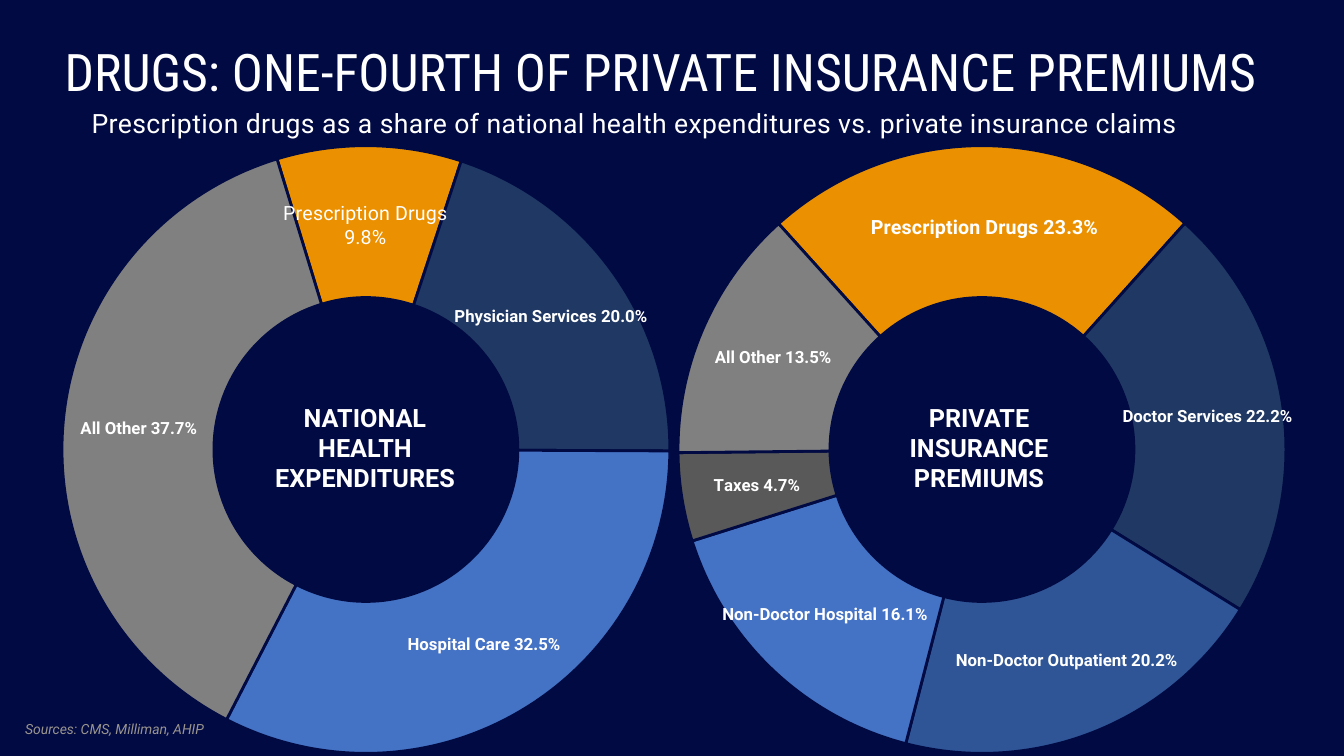
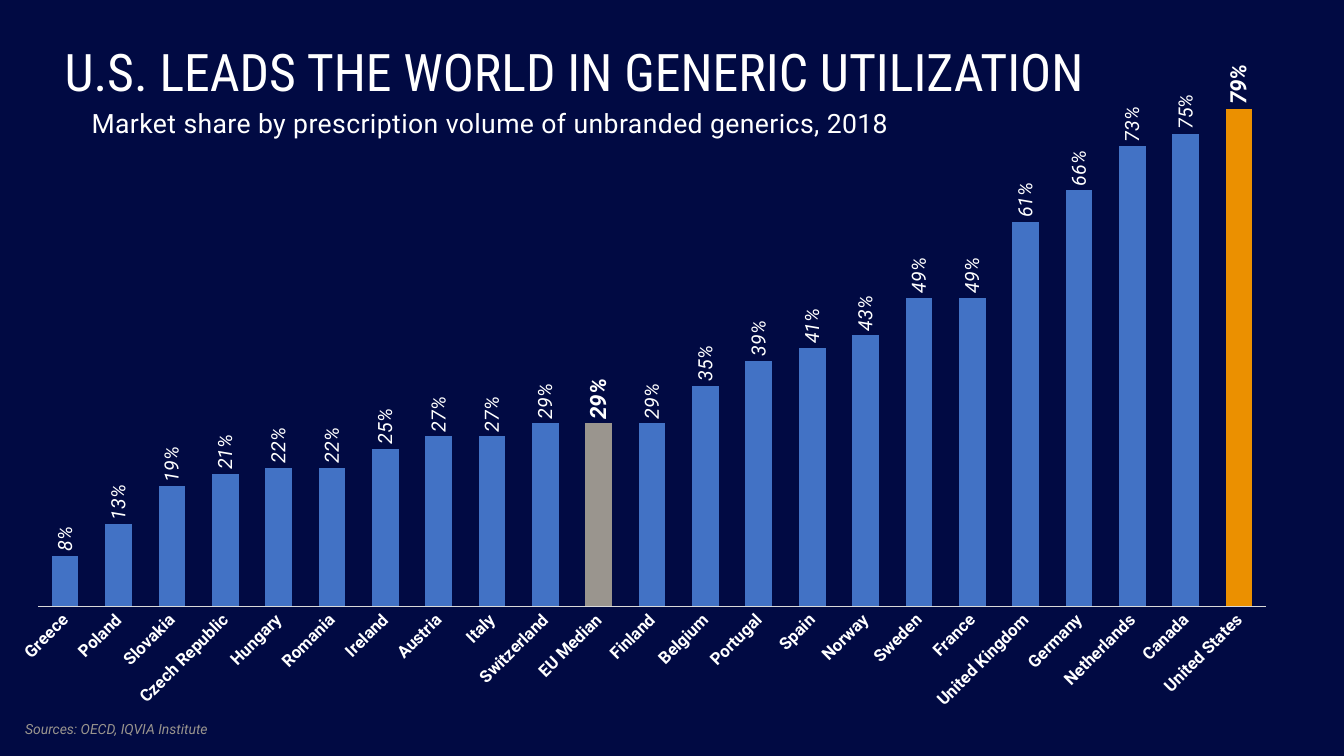
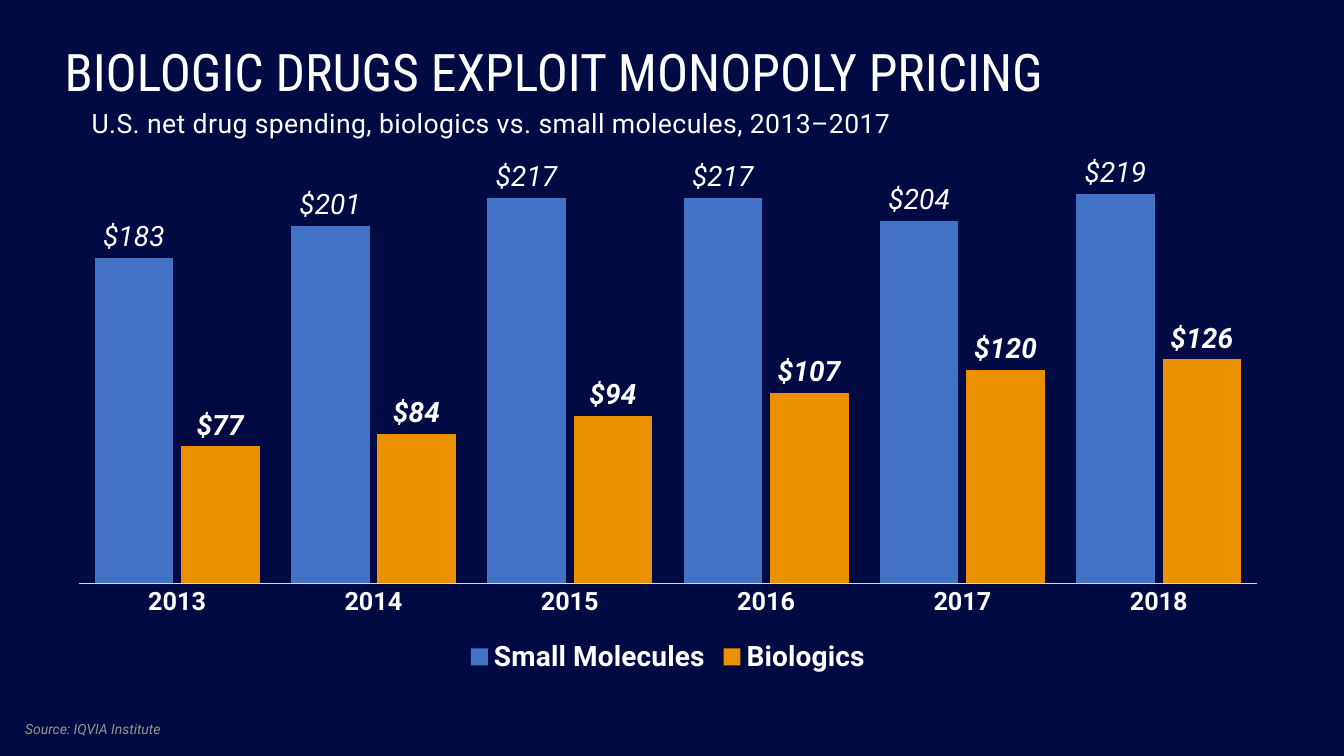
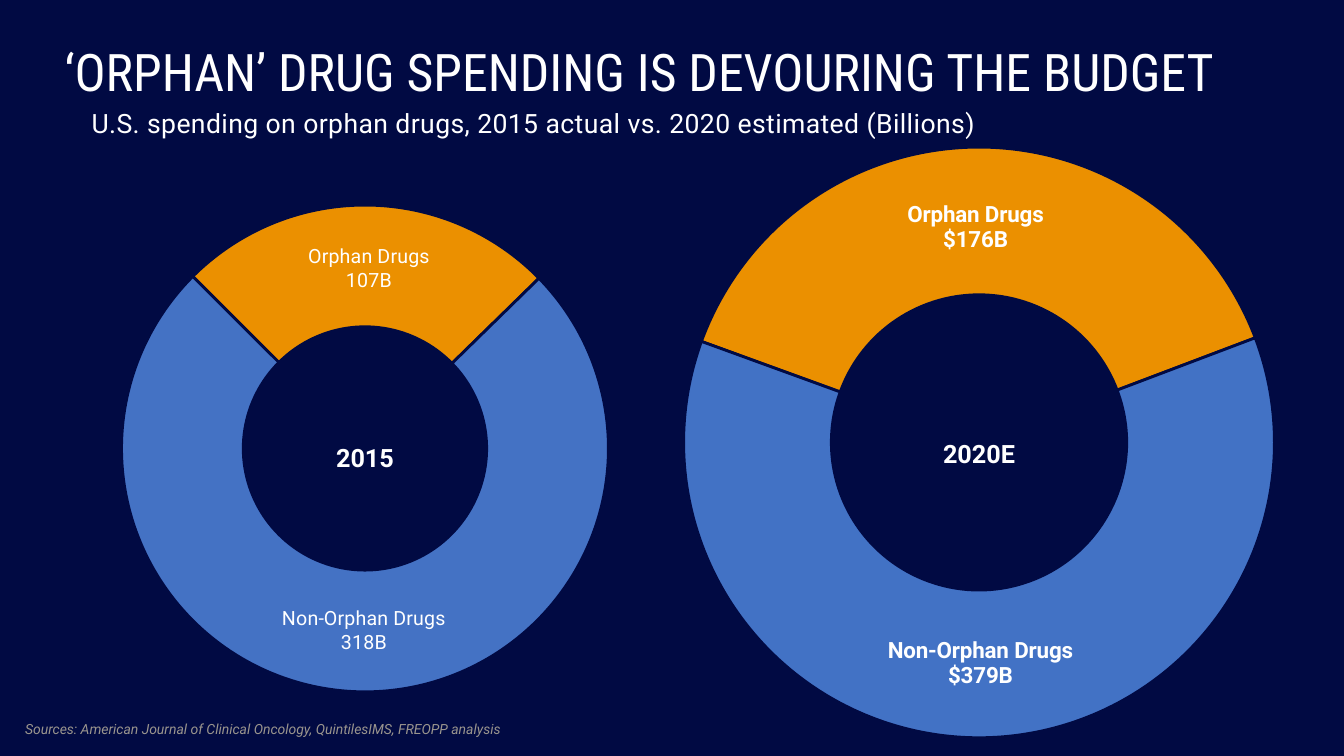
from dataclasses import dataclass
from typing import Optional

from lxml import etree
from pptx import Presentation
from pptx.chart.chart import Chart
from pptx.chart.data import CategoryChartData
from pptx.dml.color import RGBColor
from pptx.enum import chart as ce, text as te
from pptx.oxml import parse_xml
from pptx.oxml.ns import nsdecls, qn
from pptx.slide import Slide
from pptx.util import Inches, Pt

NAVY = RGBColor(0x01, 0x0A, 0x43)
WHITE = RGBColor(0xFF, 0xFF, 0xFF)
BLACK = RGBColor(0, 0, 0)
ORANGE = RGBColor(0xEB, 0x90, 0x00)
DEEP = RGBColor(0x20, 0x38, 0x64)
MID = RGBColor(0x2F, 0x55, 0x97)
BLUE = RGBColor(0x44, 0x72, 0xC4)
BAR = RGBColor(0x42, 0x72, 0xC5)
COAL = RGBColor(0x59, 0x59, 0x59)
GRAY = RGBColor(0x80, 0x80, 0x80)
STONE = RGBColor(0x9A, 0x95, 0x8E)
RULE = RGBColor(0xD9, 0xD9, 0xD9)
FONT = "Roboto"

Box = tuple[float, float, float, float]


@dataclass
class Head:
    title: str
    sub: str
    source: str


@dataclass
class Slice:
    name: str
    value: Optional[float]
    color: RGBColor
    note: str = ""


@dataclass
class Ring:
    """A doughnut: frame, centre and diameter in inches, and its first angle.

    The label of the first slice is moved by nudge, in inches.
    """
    box: Box
    center: tuple[float, float]
    size: float
    start: int
    slices: list[Slice]
    hub: str
    hub_box: Box
    nudge: tuple[float, float]
    lead: int = 14
    bold: bool = False


@dataclass
class Group:
    name: str
    values: list[float]
    color: RGBColor
    bold: bool = False


@dataclass
class Bars:
    box: Box
    plot: Box
    names: list[str]
    groups: list[Group]
    top: float
    gap: int
    lap: int
    form: str
    size: int
    axis: int


def style(font, size: float, bold: bool = False, italic: bool = False,
          color: RGBColor = WHITE, name: str = FONT) -> None:
    font.name, font.size = name, Pt(size)
    font.bold, font.italic = bold, italic
    font.color.rgb = color


def paint(form, color: RGBColor) -> None:
    form.fill.solid()
    form.fill.fore_color.rgb = color


def write(slide: Slide, box: Box, words: str, size: float, center: bool = False,
          track: int = 0, **look) -> None:
    frame = slide.shapes.add_textbox(*map(Inches, box)).text_frame
    frame.word_wrap = True
    para = frame.paragraphs[0]
    para.alignment = te.PP_ALIGN.CENTER if center else te.PP_ALIGN.LEFT
    run = para.add_run()
    run.text = words
    style(run.font, size, **look)
    if track:
        run.font._element.set("spc", str(track))


def add_page(deck, head: Head) -> Slide:
    slide = deck.slides.add_slide(deck.slide_layouts[5])
    title = slide.shapes.title
    title.left, title.top, title.width, title.height = map(
        Inches, (0.54, 0.4, 12.17, 0.68))
    frame = title.text_frame
    frame.auto_size = te.MSO_AUTO_SIZE.NONE
    frame.vertical_anchor = te.MSO_ANCHOR.MIDDLE
    para = frame.paragraphs[0]
    para.alignment, para.line_spacing = te.PP_ALIGN.LEFT, 0.9
    run = para.add_run()
    run.text = head.title
    style(run.font, 37, name="Roboto Condensed")
    write(slide, (0.81, 1.01, 12.04, 0.42), head.sub, 19, track=30)
    write(slide, (0.15, 7.1, 9.85, 0.27), head.source, 10, italic=True, color=STONE)
    return slide


def add_plot(slide: Slide, kind, box: Box, data: CategoryChartData, plot: Box) -> Chart:
    """Add a clear chart whose inner plot fills the given fractions of its frame."""
    chart = slide.shapes.add_chart(kind, *map(Inches, box), data).chart
    style(chart.font, 10, color=BLACK, name="Calibri")
    chart.has_title = chart.has_legend = False
    clear = f'<c:spPr {nsdecls("c", "a")}><a:noFill/><a:ln><a:noFill/></a:ln></c:spPr>'
    root = chart._chartSpace
    root.find(qn("c:chart")).addnext(parse_xml(clear))
    area = root.xpath("c:chart/c:plotArea")[0]
    for old in area.findall(qn("c:layout")):
        area.remove(old)
    marks = "".join(f'<c:{key} val="{val:.4f}"/>' for key, val in zip("xywh", plot))
    area.insert(0, parse_xml(
        f'<c:layout {nsdecls("c")}><c:manualLayout><c:layoutTarget val="inner"/>'
        f'<c:xMode val="edge"/><c:yMode val="edge"/>{marks}</c:manualLayout></c:layout>'))
    area.append(parse_xml(clear))
    return chart


def add_ring(slide: Slide, ring: Ring) -> None:
    data = CategoryChartData(number_format="0.0%")
    data.categories = [part.name for part in ring.slices]
    data.add_series("Series 1", [part.value for part in ring.slices])
    left, top, wide, high = ring.box
    (mid_x, mid_y), size = ring.center, ring.size
    plot = ((mid_x - size / 2 - left) / wide, (mid_y - size / 2 - top) / high,
            size / wide, size / high)
    chart = add_plot(slide, ce.XL_CHART_TYPE.DOUGHNUT, ring.box, data, plot)
    root = chart._chartSpace
    for tag, val in (("firstSliceAng", ring.start), ("holeSize", 50)):
        root.xpath(f".//c:{tag}")[0].set("val", str(val))
    row = chart.plots[0].series[0]
    tags = row.data_labels
    tags.number_format, tags.number_format_is_linked = "0.0%", False
    tags.show_value = tags.show_category_name = True
    style(tags.font, 12, bold=True)
    for num, part in enumerate(ring.slices):
        point = row.points[num]
        paint(point.format, part.color)
        point.format.line.color.rgb = NAVY
        point.format.line.width = Pt(2)
        if part.note:
            frame = point.data_label.text_frame
            for pos, line in enumerate(part.note.split("\n")):
                para = frame.add_paragraph() if pos else frame.paragraphs[0]
                run = para.add_run()
                run.text = line
                style(run.font, ring.lead, ring.bold)
        elif num == 0:
            style(point.data_label.font, ring.lead, ring.bold)
    for last in row._element.xpath(".//c:showBubbleSize"):
        last.getparent().find(qn("c:showCatName")).set("val", "1")
        gap = etree.Element(qn("c:separator"))
        gap.text = " "
        last.addnext(gap)
    shift_x, shift_y = ring.nudge
    first = row._element.xpath("c:dLbls/c:dLbl[c:idx/@val='0']/c:idx")[0]
    first.addnext(parse_xml(
        f'<c:layout {nsdecls("c")}><c:manualLayout><c:x val="{shift_x / wide:.4f}"/>'
        f'<c:y val="{shift_y / high:.4f}"/></c:manualLayout></c:layout>'))
    write(slide, ring.hub_box, ring.hub, 18, center=True, bold=True)


def add_bars(slide: Slide, bars: Bars) -> Chart:
    data = CategoryChartData(number_format=bars.form)
    data.categories = bars.names
    for group in bars.groups:
        data.add_series(group.name, group.values)
    chart = add_plot(slide, ce.XL_CHART_TYPE.COLUMN_CLUSTERED, bars.box, data, bars.plot)
    plot = chart.plots[0]
    plot.gap_width, plot.overlap, plot.vary_by_categories = bars.gap, bars.lap, False
    scale, axis = chart.value_axis, chart.category_axis
    scale.minimum_scale, scale.maximum_scale = 0, bars.top
    scale.visible = scale.has_major_gridlines = False
    axis.major_tick_mark = ce.XL_TICK_MARK.NONE
    axis.format.line.color.rgb = RULE
    axis.format.line.width = Pt(0.75)
    style(axis.tick_labels.font, bars.axis, bold=True)
    for row, group in zip(plot.series, bars.groups):
        paint(row.format, group.color)
        tags = row.data_labels
        tags.number_format, tags.number_format_is_linked = bars.form, False
        tags.show_value = True
        tags.position = ce.XL_LABEL_POSITION.OUTSIDE_END
        style(tags.font, bars.size, group.bold, italic=True)
    return chart


def turn(part, angle: int) -> None:
    """Rotate all the text set below a chart element, in degrees."""
    for body in part.xpath(".//c:txPr/a:bodyPr"):
        body.set("rot", str(angle * 60000))
        body.set("vert", "horz")


def accent(chart: Chart, num: int, color: RGBColor) -> None:
    point = chart.plots[0].series[0].points[num]
    paint(point.format, color)
    style(point.data_label.font, 16, bold=True, italic=True)
    point.data_label.position = ce.XL_LABEL_POSITION.OUTSIDE_END


LEFT: Box = (0.29, 1.28, 6.67, 6.33)
RIGHT: Box = (6.37, 1.28, 6.67, 6.33)

CLAIMS = Head("DRUGS: ONE-FOURTH OF PRIVATE INSURANCE PREMIUMS",
              "Prescription drugs as a share of national health expenditures"
              " vs. private insurance claims",
              "Sources: CMS, Milliman, AHIP")
NATION = Ring(LEFT, (3.63, 4.46), 6.03, 343, [
    Slice("Prescription Drugs", 0.098, ORANGE, "Prescription Drugs\n9.8%"),
    Slice("Physician Services", 0.2, DEEP),
    Slice("Hospital Care", 0.325, BLUE),
    Slice("All Other", 0.377, GRAY),
], "NATIONAL HEALTH EXPENDITURES", (2.56, 3.94, 2.12, 1.01), (-0.03, 0.04))
PRIVATE = Ring(RIGHT, (9.74, 4.46), 6.03, 318, [
    Slice("Prescription Drugs", 0.233, ORANGE),
    Slice("Doctor Services", 0.222, DEEP),
    Slice("Non-Doctor Outpatient", 0.202, MID),
    Slice("Non-Doctor Hospital", 0.161, BLUE),
    Slice("Taxes", 0.047, COAL),
    Slice("All Other", 0.135, GRAY),
], "PRIVATE INSURANCE PREMIUMS", (8.65, 3.94, 2.12, 1.01), (0.03, 0.06), bold=True)

USAGE = Head("U.S. LEADS THE WORLD IN GENERIC UTILIZATION",
             "Market share by prescription volume of unbranded generics, 2018",
             "Sources: OECD, IQVIA Institute")
SHARES = {
    "Greece": 0.08, "Poland": 0.13, "Slovakia": 0.19, "Czech Republic": 0.21,
    "Hungary": 0.22, "Romania": 0.22, "Ireland": 0.25, "Austria": 0.27,
    "Italy": 0.27, "Switzerland": 0.29, "EU Median": 0.29, "Finland": 0.29,
    "Belgium": 0.35, "Portugal": 0.39, "Spain": 0.41, "Norway": 0.43,
    "Sweden": 0.49, "France": 0.49, "United Kingdom": 0.61, "Germany": 0.66,
    "Netherlands": 0.73, "Canada": 0.75, "United States": 0.79,
}
LANDS = Bars((0, 0.25, 12.72, 7.09), (0.03, 0.108, 0.957, 0.705), list(SHARES),
             [Group("Series 1", list(SHARES.values()), BAR)],
             0.8, 100, -27, "0%", 14, 12)

PRICING = Head("BIOLOGIC DRUGS EXPLOIT MONOPOLY PRICING",
               "U.S. net drug spending, biologics vs. small molecules, 2013–2017",
               "Source: IQVIA Institute")
SPEND = Bars((0.54, 1.44, 12.17, 5.3), (0.02, 0.022, 0.96, 0.798),
             [str(year) for year in range(2013, 2019)],
             [Group("Small Molecules", [183, 201, 217, 217, 204, 219], BAR),
              Group("Biologics", [77, 84, 94, 107, 120, 126], ORANGE, True)],
             240, 40, -10, '"$"#,##0', 20, 18)

BUDGET = Head("‘ORPHAN’ DRUG SPENDING IS DEVOURING THE BUDGET",
              "U.S. spending on orphan drugs, 2015 actual vs. 2020 estimated (Billions)",
              "Sources: American Journal of Clinical Oncology, QuintilesIMS, FREOPP analysis")
PAST = Ring((0.79, 1.82, 5.66, 5.37), (3.62, 4.45), 4.83, 315, [
    Slice("Orphan Drugs", 107, ORANGE, "Orphan Drugs\n107B"),
    Slice("", None, DEEP),
    Slice("Non-Orphan Drugs", 318, BLUE, "Non-Orphan Drugs\n318B"),
], "2015", (2.56, 4.34, 2.12, 0.4), (0.03, 0.03))
AHEAD = Ring(RIGHT, (9.71, 4.39), 5.86, 290, [
    Slice("Orphan Drugs", 176, ORANGE, "Orphan Drugs\n$176B"),
    Slice("", None, DEEP),
    Slice("Non-Orphan Drugs", 279, BAR, "Non-Orphan Drugs\n$379B"),
], "2020E", (8.65, 4.3, 2.12, 0.4), (-0.02, 0.07), lead=16, bold=True)


def add_rings(deck, head: Head, *rings: Ring) -> None:
    slide = add_page(deck, head)
    for ring in rings:
        add_ring(slide, ring)


def add_lands(deck) -> None:
    chart = add_bars(add_page(deck, USAGE), LANDS)
    for name, color in (("EU Median", STONE), ("United States", ORANGE)):
        accent(chart, LANDS.names.index(name), color)
    turn(chart.plots[0].series[0]._element, -90)
    turn(chart.category_axis._element, -45)


def add_spend(deck) -> None:
    chart = add_bars(add_page(deck, PRICING), SPEND)
    chart.has_legend = True
    chart.legend.position = ce.XL_LEGEND_POSITION.BOTTOM
    chart.legend.include_in_layout = False
    style(chart.legend.font, 20, bold=True)


def main() -> None:
    deck = Presentation()
    deck.slide_width, deck.slide_height = Inches(13.33), Inches(7.5)
    paint(deck.slide_master.background, NAVY)
    add_rings(deck, CLAIMS, NATION, PRIVATE)
    add_lands(deck)
    add_spend(deck)
    add_rings(deck, BUDGET, PAST, AHEAD)
    deck.save("out.pptx")


if __name__ == "__main__":
    main()
